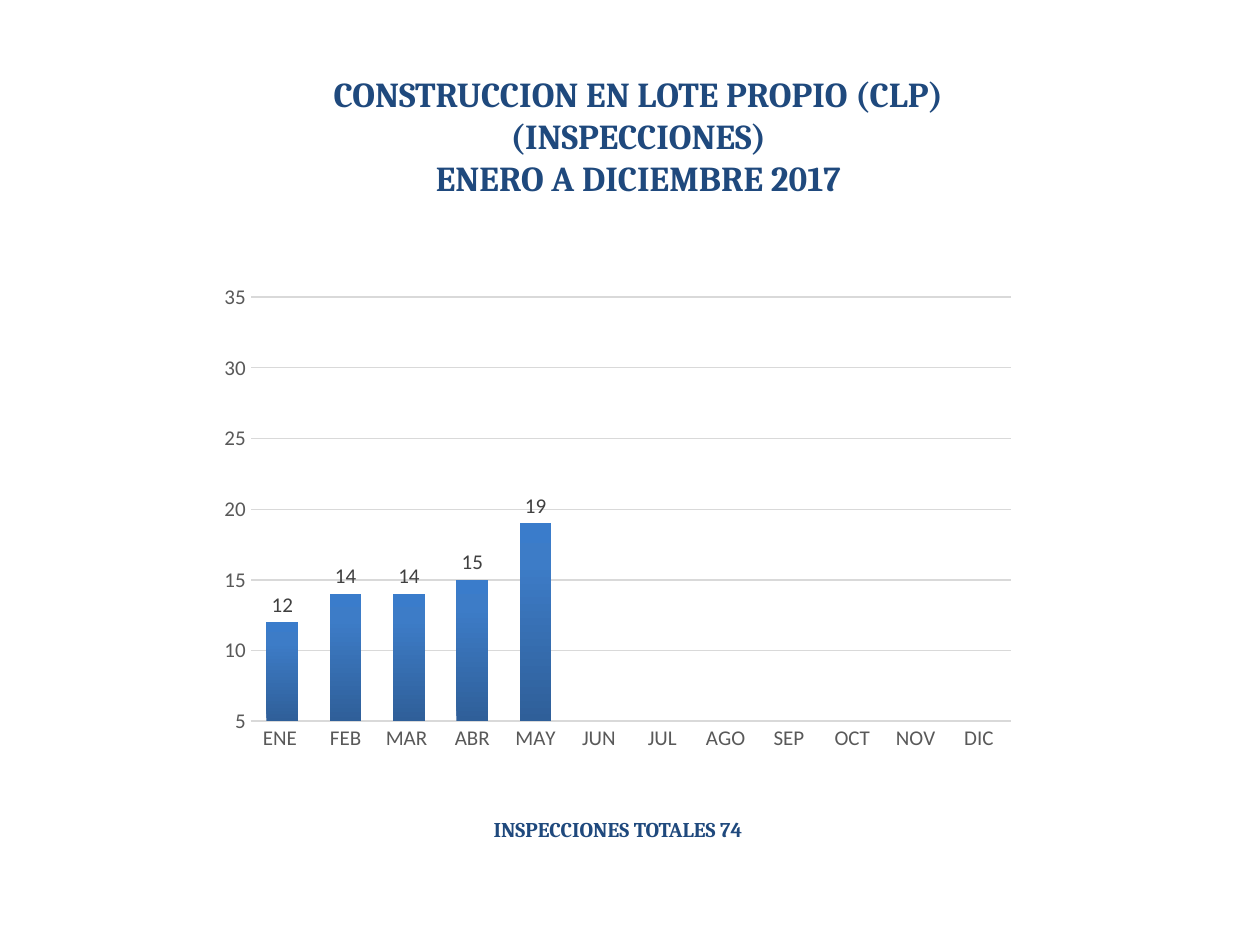
import copy

import pptx
import pptx.chart.data
import pptx.dml.color
import pptx.enum.chart
import pptx.enum.dml
import pptx.enum.text
import pptx.oxml.ns
import pptx.util

# Content
TITLE = ["CONSTRUCCION EN LOTE PROPIO (CLP)", "(INSPECCIONES)", "ENERO A DICIEMBRE 2017"]
TOTAL = ["INSPECCIONES TOTALES 74"]
MONTHS = ["ENE ", "FEB", "MAR ", "ABR", "MAY", "JUN", "JUL", "AGO", "SEP", "OCT", "NOV", "DIC"]
INSPECTIONS = [12, 14, 14, 15, 19]

# Places in px: left, top, width, height
PX = 914400 // 126
SLIDE = (1260, 945)
TITLE_BOX = (309, 66, 659, 140)
TOTAL_BOX = (481, 810, 407, 38)
CHART_BOX = (208, 275, 819, 486)


class Theme:
    heading_font, chart_font = "Cambria", "Calibri"
    heading, axis, label, grid, text = "1F497D", "595959", "404040", "D9D9D9", "000000"
    bar = [(0, "2F5F99"), (0.8, "3D7CC7"), (1, "3A7CCB")]
    title_size, total_size, axis_size, chart_size = 20, 12, 12, 10


def rgb(value):
    return pptx.dml.color.RGBColor.from_string(value)


def emu(box):
    return [v * PX for v in box]


def style(font, name, size, color, bold=False):
    font.name, font.size, font.bold = name, pptx.util.Pt(size), bold
    font.color.rgb = rgb(color)


def fill_text(sp, box, lines, size, align, anchor):
    sp.left, sp.top, sp.width, sp.height = emu(box)
    tf = sp.text_frame
    tf.auto_size = pptx.enum.text.MSO_AUTO_SIZE.NONE
    tf.word_wrap, tf.vertical_anchor = True, anchor
    for i, line in enumerate(lines):
        p = tf.add_paragraph() if i else tf.paragraphs[0]
        p.alignment, p.space_before = align, pptx.util.Pt(0)
        r = p.add_run()
        r.text = line
        style(r.font, Theme.heading_font, size, Theme.heading, True)


def fill_gradient(fill, stops, angle):
    fill.gradient()
    fill.gradient_angle = angle
    gs_list = fill._xPr.find(".//" + pptx.oxml.ns.qn("a:gsLst"))
    gs_list.append(copy.deepcopy(gs_list[-1]))
    for stop, (position, color) in zip(fill.gradient_stops, stops):
        stop.position = position
        stop.color.rgb = rgb(color)


def add_inspections_chart(slide):
    data = pptx.chart.data.CategoryChartData()
    data.categories = MONTHS
    data.add_series("Series 1", INSPECTIONS + [None] * (len(MONTHS) - len(INSPECTIONS)))
    kind = pptx.enum.chart.XL_CHART_TYPE.COLUMN_CLUSTERED
    chart = slide.shapes.add_chart(kind, *emu(CHART_BOX), data).chart
    chart.has_title = chart.has_legend = False
    style(chart.font, Theme.chart_font, Theme.chart_size, Theme.text)

    # Axes
    months, counts = chart.category_axis, chart.value_axis
    for axis in (months, counts):
        axis.major_tick_mark = axis.minor_tick_mark = pptx.enum.chart.XL_TICK_MARK.NONE
        style(axis.tick_labels.font, Theme.chart_font, Theme.axis_size, Theme.axis)
    counts.minimum_scale, counts.maximum_scale, counts.major_unit = 5, 35, 5
    counts.format.line.fill.background()
    counts.has_major_gridlines = True
    for line, width in ((months.format.line, 1), (counts.major_gridlines.format.line, 0.75)):
        line.color.rgb = rgb(Theme.grid)
        line.width = pptx.util.Pt(width)

    # Bars and their labels
    plot = chart.plots[0]
    plot.gap_width, plot.overlap, plot.vary_by_categories = 100, -24, False
    fill_gradient(plot.series[0].format.fill, Theme.bar, 90)
    labels = plot.series[0].data_labels
    labels.show_value = True
    labels.position = pptx.enum.chart.XL_LABEL_POSITION.OUTSIDE_END
    style(labels.font, Theme.chart_font, Theme.axis_size, Theme.label)


def main():
    prs = pptx.Presentation()
    prs.slide_width, prs.slide_height = emu(SLIDE)
    slide = prs.slides.add_slide(prs.slide_layouts.get_by_name("Section Header"))
    align, anchor = pptx.enum.text.PP_ALIGN, pptx.enum.text.MSO_ANCHOR
    title, total = slide.placeholders
    fill_text(title, TITLE_BOX, TITLE, Theme.title_size, align.CENTER, anchor.TOP)
    fill_text(total, TOTAL_BOX, TOTAL, Theme.total_size, align.LEFT, anchor.BOTTOM)
    add_inspections_chart(slide)
    prs.save("out.pptx")


if __name__ == "__main__":
    main()
